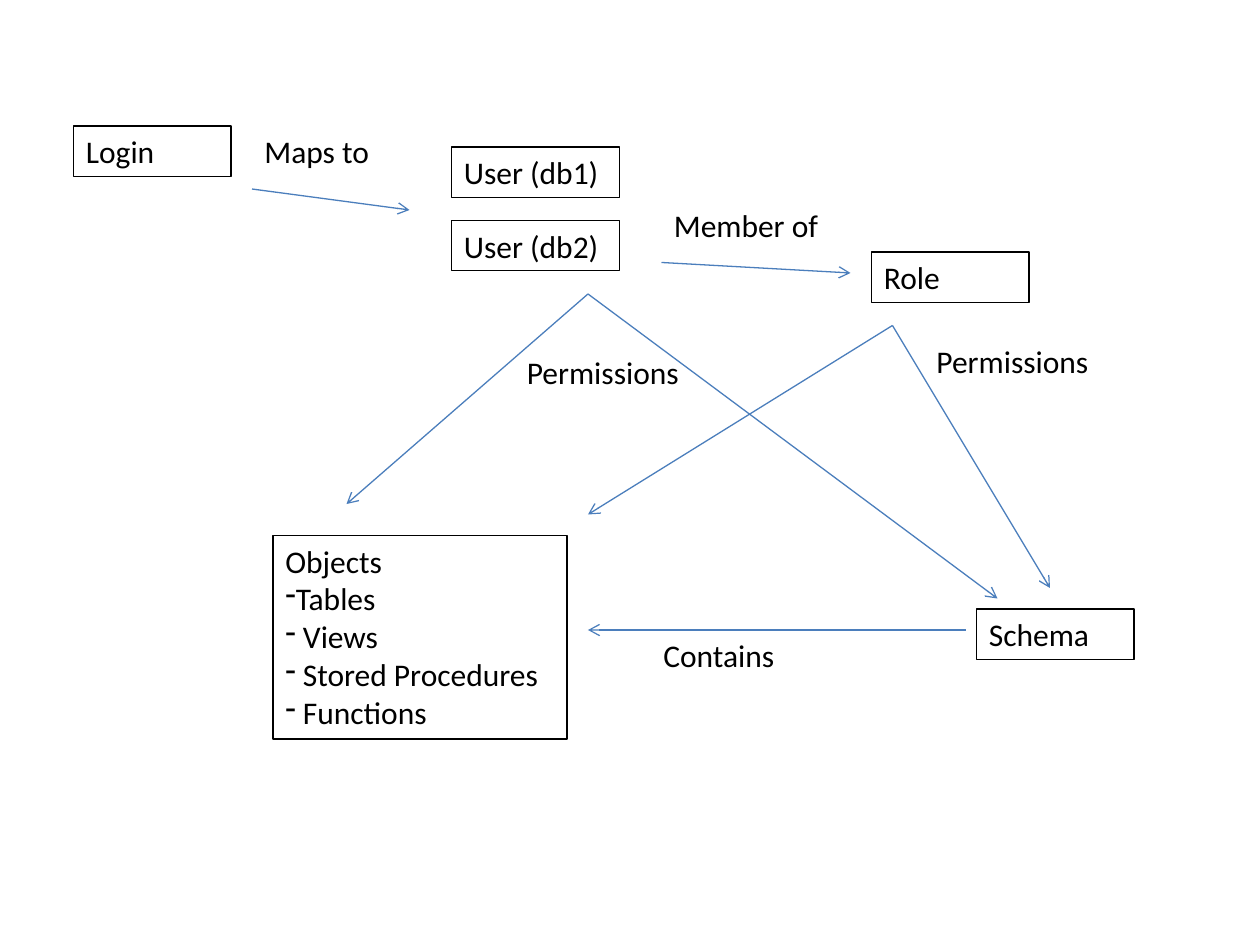
from lxml import etree
from pptx import Presentation
from pptx import util as u
from pptx.dml.color import RGBColor
from pptx.enum import shapes, text
from pptx.oxml.ns import qn

COLS, ROWS = 120, 90
CELL = u.Inches(10) // COLS
LINE_HEIGHT = 4.8  # rows taken by a box with one line of text
BLACK, BLUE = "000000", "4B7EBC"

# label, column, row, width in columns
BOXES = [
    ("Login", 7, 12, 15),
    ("User (db1)", 43, 14, 16),
    ("User (db2)", 43, 21, 16),
    ("Role", 83, 24, 15),
    ("Schema", 93, 58, 15),
]
LABELS = [
    ("Maps to", 24, 12, 13),
    ("Member of", 63, 19, 19),
    ("Permissions", 49, 33, 17),
    ("Permissions", 88, 32, 21),
    ("Contains", 62, 60, 17),
]
OBJECT_KINDS = ["Tables", " Views", " Stored Procedures", " Functions"]

# start and end as (column, row)
USER_OUT, ROLE_OUT = (56, 28), (85, 31)
ARROWS = [
    ((24, 18), (39, 20)),
    ((63, 25), (81, 26)),
    (USER_OUT, (95, 57)),
    (USER_OUT, (33, 48)),
    (ROLE_OUT, (100, 56)),
    (ROLE_OUT, (56, 49)),
    ((92, 60), (56, 60)),
]


def grid(*values):
    return [u.Emu(round(v * CELL)) for v in values]


def color(hex_string):
    return RGBColor.from_string(hex_string)


def add_dash(p):
    """Give the paragraph a dash bullet with no indent."""
    pPr = p._p.get_or_add_pPr()
    pPr.set("marL", "0")
    pPr.set("indent", "0")
    etree.SubElement(pPr, qn("a:buFontTx"))
    etree.SubElement(pPr, qn("a:buChar"), char="-")


def write(tf, line, size=18, font="Calibri", fill=BLACK, bullet=False, first=True):
    """Write one paragraph into the text frame."""
    p = tf.paragraphs[0] if first else tf.add_paragraph()
    r = p.add_run()
    r.text = line
    r.font.size = u.Pt(size)
    r.font.name = font
    r.font.color.rgb = color(fill)
    if bullet:
        add_dash(p)


def add_label(s, label, col, row, width, height=LINE_HEIGHT):
    sp = s.shapes.add_textbox(*grid(col, row, width, height))
    tf = sp.text_frame
    tf.word_wrap = True
    tf.auto_size = text.MSO_AUTO_SIZE.SHAPE_TO_FIT_TEXT
    write(tf, label)
    return sp


def add_box(s, *args, **kwargs):
    """Add a label with a thin black outline."""
    sp = add_label(s, *args, **kwargs)
    sp.line.color.rgb = color(BLACK)
    sp.line.width = u.Pt(0.75)
    return sp


def add_arrow(s, start, end):
    line = s.shapes.add_connector(shapes.MSO_CONNECTOR.STRAIGHT, *grid(*start, *end))
    line.line.color.rgb = color(BLUE)
    line.line.width = u.Pt(0.75)
    etree.SubElement(line.line._get_or_add_ln(), qn("a:tailEnd"), type="arrow")
    etree.SubElement(line._element.spPr, qn("a:effectLst"))


def main():
    prs = Presentation()
    prs.slide_width, prs.slide_height = grid(COLS, ROWS)
    s = prs.slides.add_slide(prs.slide_layouts[6])

    for box in BOXES:
        add_box(s, *box)
    objects = add_box(s, "Objects", 26, 51, 28, height=19.4)
    for kind in OBJECT_KINDS:
        write(objects.text_frame, kind, bullet=True, first=False)
    for label in LABELS:
        add_label(s, *label)
    for start, end in ARROWS:
        add_arrow(s, start, end)

    prs.save("out.pptx")


if __name__ == "__main__":
    main()
